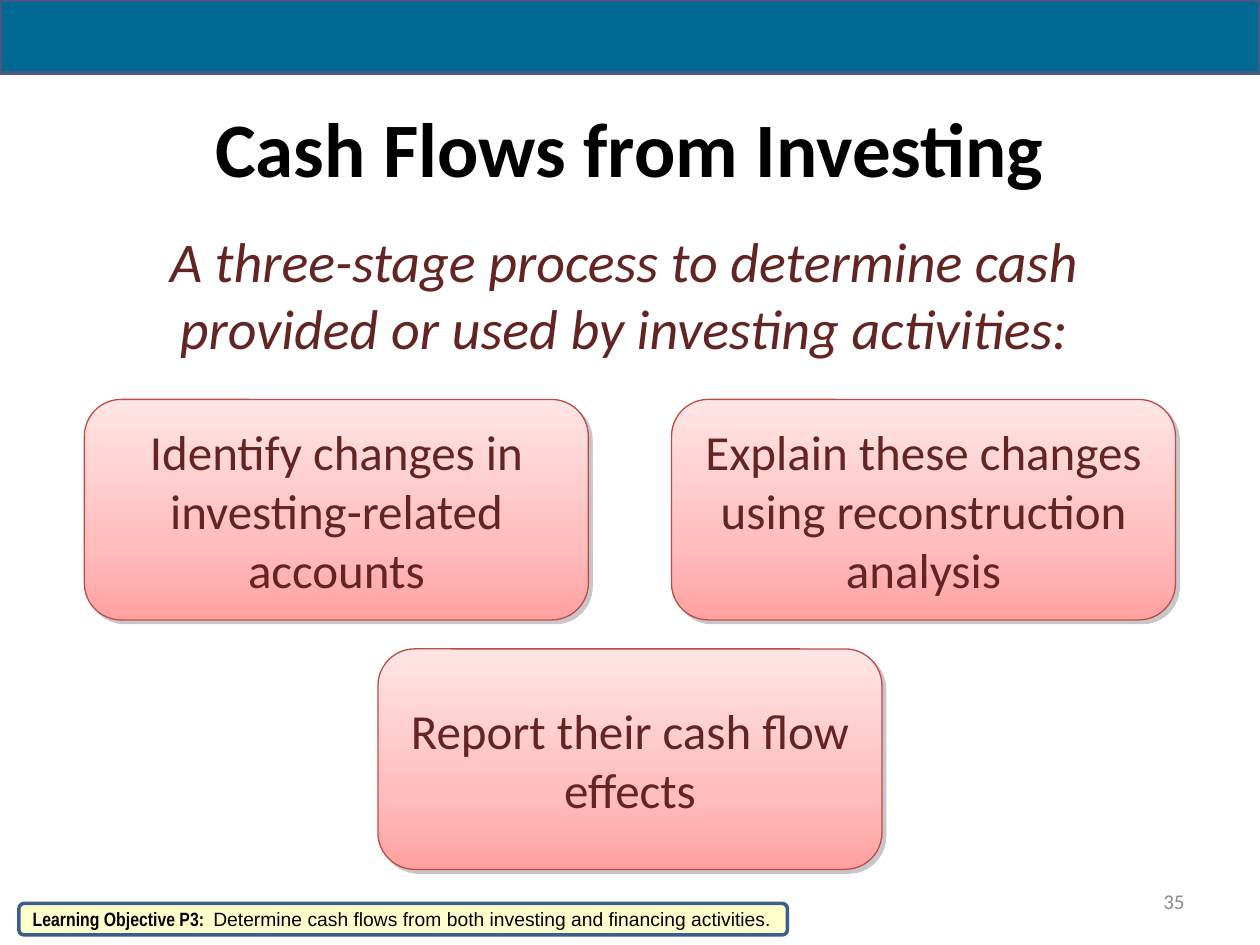
"""Build the slide on the three stages of finding cash flows from investing."""
from dataclasses import dataclass

from lxml.etree import SubElement
from pptx import Presentation
from pptx.dml.color import RGBColor
from pptx.enum.shapes import MSO_SHAPE as Kind
from pptx.enum.text import MSO_ANCHOR as Anchor, PP_ALIGN as Align
from pptx.oxml.ns import qn
from pptx.util import Inches, Pt

HUE = {
    "black": "000000", "wine": "632523", "red": "BE4B48", "shade": "808080",
    "teal": "006991", "edge": "475785", "cream": "FFFFCC", "navy": "3A5F8C",
    "gray": "8C8C8C",
}
FADE = {0: "FFE5E5", 65: "FFBEBD", 100: "FFA2A1"}


@dataclass
class Box:
    """A place on the slide, in inches."""
    left: float
    top: float
    width: float
    height: float

    def place(self) -> tuple:
        """Give the place as lengths."""
        return tuple(map(Inches, (self.left, self.top, self.width, self.height)))


@dataclass
class Stage:
    """One stage of the process."""
    text: str
    left: float
    top: float


STAGES = [
    Stage("Identify changes in investing-related accounts", 0.67, 3.17),
    Stage("Explain these changes using reconstruction analysis", 5.33, 3.17),
    Stage("Report their cash flow effects", 3, 5.15),
]


def style(font, size: float, hue: str, name: str = "Calibri",
          bold: bool = False, italic: bool = False) -> None:
    """Set the look of a font."""
    font.size, font.name = Pt(size), name
    font.bold, font.italic = bold, italic
    font.color.rgb = RGBColor.from_string(HUE[hue])


def write(shape, text: str, size: float, hue: str, align=Align.CENTER,
          anchor=Anchor.MIDDLE, **look):
    """Put one paragraph in a shape and return it."""
    frame = shape.text_frame
    frame.word_wrap, frame.vertical_anchor = True, anchor
    para = frame.paragraphs[0]
    para.text, para.alignment = text, align
    style(para.font, size, hue, **look)
    return para


def draw(slide, kind, box: Box, line: str, width: float, fill: str = ""):
    """Add an outlined shape without a shadow."""
    shape = slide.shapes.add_shape(kind, *box.place())
    shape.shadow.inherit = False
    shape.line.color.rgb = RGBColor.from_string(HUE[line])
    shape.line.width = Pt(width)
    if fill:
        shape.fill.solid()
        shape.fill.fore_color.rgb = RGBColor.from_string(HUE[fill])
    return shape


def shade(shape) -> None:
    """Give a shape the downward fade and a hard drop shadow."""
    shape.fill.gradient()
    shape.fill.gradient_angle = 270
    props = shape.element.spPr
    stops = props.find(".//" + qn("a:gsLst"))
    for stop in list(stops):
        stops.remove(stop)
    for pos, tint in FADE.items():
        stop = SubElement(stops, qn("a:gs"), pos=str(pos * 1000))
        SubElement(stop, qn("a:srgbClr"), val=tint)
    drop = SubElement(props.find(qn("a:effectLst")), qn("a:outerShdw"),
                      blurRad="0", dist=str(Pt(3)), dir=str(45 * 60000),
                      rotWithShape="0")
    tone = SubElement(drop, qn("a:srgbClr"), val=HUE["shade"])
    SubElement(tone, qn("a:alpha"), val="43000")


def draw_stage(slide, stage: Stage) -> None:
    """Draw one stage card."""
    card = draw(slide, Kind.ROUNDED_RECTANGLE,
                Box(stage.left, stage.top, 4, 1.75), "red", 0.75)
    shade(card)
    write(card, stage.text, 28, "wine")


def main() -> None:
    """Build and save the slide."""
    deck = Presentation()
    deck.slide_width, deck.slide_height = Inches(10), Inches(7.5)
    slide = deck.slides.add_slide(deck.slide_layouts[5])

    title = slide.shapes.title
    title.left, title.top, title.width, title.height = Box(0.5, 0.67, 9, 1.08).place()
    head = write(title, "Cash Flows from Investing", 44, "black", bold=True)
    head.line_spacing = 0.9

    for stage in STAGES:
        draw_stage(slide, stage)

    intro = slide.shapes.add_textbox(*Box(0.83, 1.75, 8.25, 1.18).place())
    write(intro, "A three-stage process to determine cash provided or used by "
          "investing activities:", 32, "wine", anchor=Anchor.TOP, italic=True)

    draw(slide, Kind.RECTANGLE, Box(0, 0, 10, 0.58), "edge", 2.25, "teal")

    page = slide.shapes.add_textbox(*Box(7.17, 6.95, 2.33, 0.4).place())
    write(page, "35", 12, "gray", Align.RIGHT)

    goal = draw(slide, Kind.ROUNDED_RECTANGLE, Box(0.15, 7.17, 6.1, 0.25),
                "navy", 2, "cream")
    para = write(goal, "Learning Objective P3:  ", 11, "black", Align.LEFT,
                 name="Arial Narrow", bold=True)
    aim = para.add_run()
    aim.text = "Determine cash flows from both investing and financing activities."
    style(aim.font, 11, "black", "Arial")

    deck.save("out.pptx")


if __name__ == "__main__":
    main()
